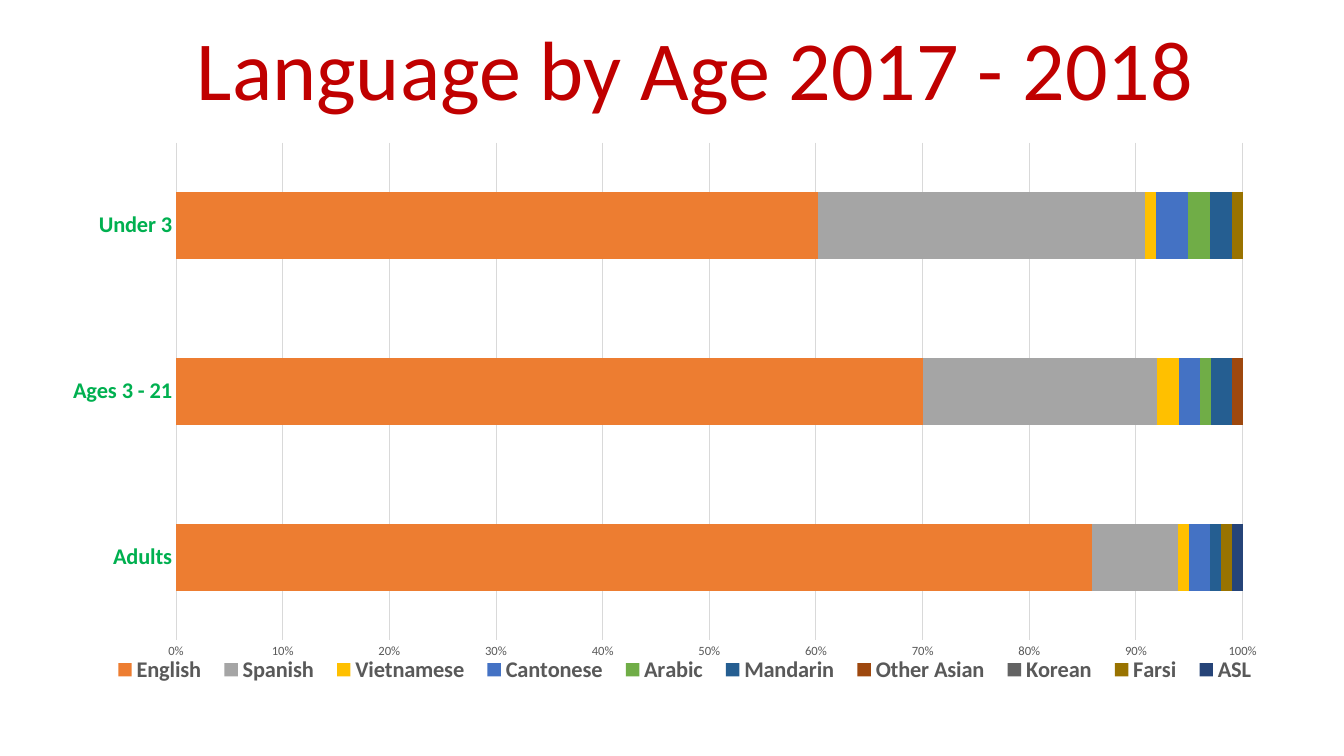
from typing import NamedTuple

from lxml import etree
from pptx import Presentation
from pptx import util as u
from pptx.chart.data import CategoryChartData
from pptx.dml.color import RGBColor
from pptx.enum import chart as ch, text
from pptx.oxml import ns

FONT = "Calibri"
COLORS = {
    "title": "C00000", "age": "00B050", "text": "595959", "grid": "D9D9D9",
    "English": "ED7D31", "Spanish": "A5A5A5", "Vietnamese": "FFC000",
    "Cantonese": "4472C4", "Arabic": "70AD47", "Mandarin": "255E91",
    "Other Asian": "9E480E", "Korean": "636363", "Farsi": "997300",
    "ASL": "264478",
}
AGES = ["Adults", "Ages 3 - 21", "Under 3"]


class Tongue(NamedTuple):
    name: str
    shares: tuple[int, int, int]


class Box(NamedTuple):
    x: float
    y: float
    w: float
    h: float


TONGUES = [
    Tongue("English", (85, 70, 59)),
    Tongue("Spanish", (8, 22, 30)),
    Tongue("Vietnamese", (1, 2, 1)),
    Tongue("Cantonese", (2, 2, 3)),
    Tongue("Arabic", (0, 1, 2)),
    Tongue("Mandarin", (1, 2, 2)),
    Tongue("Other Asian", (0, 1, 0)),
    Tongue("Korean", (0, 0, 0)),
    Tongue("Farsi", (1, 0, 1)),
    Tongue("ASL", (1, 0, 0)),
]
TITLE = Box(1.61, 0.11, 10.57, 1.11)
CHART = Box(0.53, 1.3, 12.16, 5.81)
# Fractions of the chart frame
PLOT = Box(0.10, 0.02, 0.87, 0.85)
KEY = Box(0.04, 0.89, 0.95, 0.06)


def style(font, size: int, color: str, bold: bool = False) -> None:
    font.name = FONT
    font.size = u.Pt(size)
    font.bold = bold
    font.color.rgb = RGBColor.from_string(COLORS[color])


def place(node, box: Box, index: int, inner: bool = False) -> None:
    """Give a chart part a fixed place within the chart frame."""
    for old in node.findall(ns.qn("c:layout")):
        node.remove(old)
    layout = etree.Element(ns.qn("c:layout"))
    manual = etree.SubElement(layout, ns.qn("c:manualLayout"))
    marks = [("layoutTarget", "inner")] if inner else []
    marks += [("xMode", "edge"), ("yMode", "edge")]
    marks += [(key, str(val)) for key, val in box._asdict().items()]
    for tag, val in marks:
        etree.SubElement(manual, ns.qn(f"c:{tag}")).set("val", val)
    node.insert(index, layout)


def add_title(slide) -> None:
    title = slide.shapes.title
    title.left, title.top, title.width, title.height = map(u.Inches, TITLE)
    frame = title.text_frame
    frame.text = "Language by Age 2017 - 2018"
    frame.word_wrap = True
    frame.vertical_anchor = text.MSO_ANCHOR.MIDDLE
    line = frame.paragraphs[0]
    line.alignment = text.PP_ALIGN.CENTER
    style(line.runs[0].font, 60, "title")


def add_chart(slide) -> None:
    data = CategoryChartData()
    data.categories = AGES
    for tongue in TONGUES:
        data.add_series(tongue.name, tongue.shares)
    chart = slide.shapes.add_chart(
        ch.XL_CHART_TYPE.BAR_STACKED_100, *map(u.Inches, CHART), data).chart
    chart.has_title = False
    chart.font.name = FONT
    chart.font.size = u.Pt(10)

    # Bars
    plot = chart.plots[0]
    plot.gap_width = 150
    plot.overlap = 100
    plot.vary_by_categories = False
    for series in plot.series:
        fill = series.format.fill
        fill.solid()
        fill.fore_color.rgb = RGBColor.from_string(COLORS[series.name])

    # Axes
    ages, scale = chart.category_axis, chart.value_axis
    for axis in (ages, scale):
        axis.major_tick_mark = axis.minor_tick_mark = ch.XL_TICK_MARK.NONE
        axis.format.line.fill.background()
    ages.has_major_gridlines = False
    style(ages.tick_labels.font, 16, "age", True)
    style(scale.tick_labels.font, 9, "text")
    scale.tick_labels.number_format = "0%"
    scale.tick_labels.number_format_is_linked = False
    scale.minimum_scale, scale.maximum_scale = 0, 1
    scale.major_unit = 0.1
    scale.has_major_gridlines = True
    grid = scale.major_gridlines.format.line
    grid.width = u.Pt(0.75)
    grid.color.rgb = RGBColor.from_string(COLORS["grid"])

    # Legend
    chart.has_legend = True
    legend = chart.legend
    legend.position = ch.XL_LEGEND_POSITION.BOTTOM
    legend.include_in_layout = False
    style(legend.font, 16, "text", True)

    area = chart.element.find(".//" + ns.qn("c:plotArea"))
    place(area, PLOT, 0, inner=True)
    place(chart.element.find(".//" + ns.qn("c:legend")), KEY, 1)


def main() -> None:
    deck = Presentation()
    deck.slide_width, deck.slide_height = u.Inches(13.33), u.Inches(7.5)
    slide = deck.slides.add_slide(deck.slide_layouts[5])
    add_chart(slide)
    add_title(slide)
    deck.save("out.pptx")


if __name__ == "__main__":
    main()
